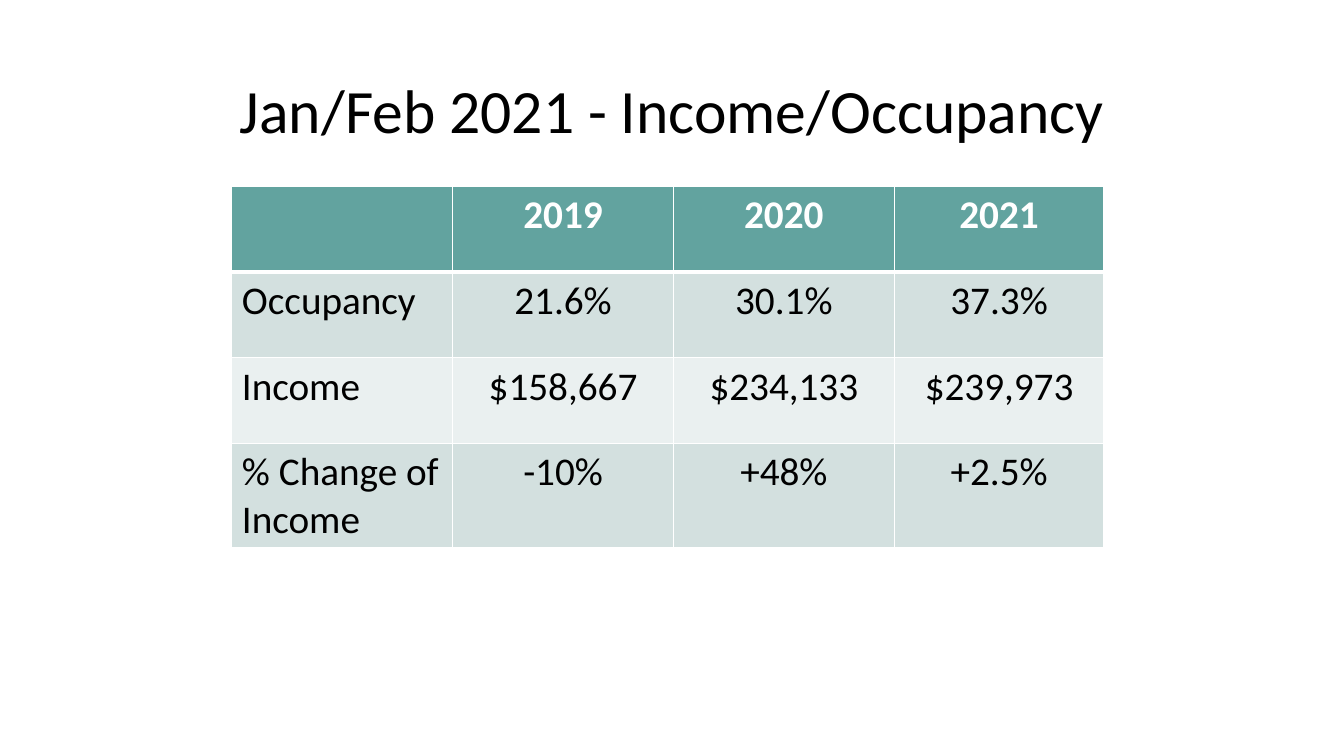
from dataclasses import dataclass

from lxml import etree
from pptx import Presentation
from pptx.dml.color import RGBColor
from pptx.enum import text as t
from pptx.oxml import ns
from pptx.util import Inches, Pt

WHITE = RGBColor(0xFF, 0xFF, 0xFF)
BLACK = RGBColor(0x00, 0x00, 0x00)
TEAL = RGBColor(0x62, 0xA3, 0x9F)
MIST = RGBColor(0xD3, 0xE0, 0xDF)
PALE = RGBColor(0xEA, 0xF0, 0xF0)

TITLE = "Jan/Feb 2021 - Income/Occupancy"
WIDTHS = (2.19, 2.19, 2.19, 2.08)
HEIGHT = 0.85


@dataclass
class Row:
    cells: tuple[str, ...]
    fill: RGBColor
    head: bool = False


ROWS = (
    Row(("", "2019", "2020", "2021"), TEAL, True),
    Row(("Occupancy", "21.6%", "30.1%", "37.3%"), MIST),
    Row(("Income", "$158,667", "$234,133", "$239,973"), PALE),
    Row(("% Change of Income", "-10%", "+48%", "+2.5%"), MIST),
)


def style(para, size: float, color: RGBColor, bold: bool, align) -> None:
    para.alignment = align
    form = {"name": "Calibri", "size": Pt(size), "bold": bold}
    for key, value in form.items():
        setattr(para.font, key, value)
    para.font.color.rgb = color


def edge(cell, sides: dict[str, float]) -> None:
    props = cell._tc.get_or_add_tcPr()
    for spot, (side, width) in enumerate(sides.items()):
        line = etree.Element(ns.qn(f"a:{side}"), w=str(Pt(width)))
        fill = etree.SubElement(line, ns.qn("a:solidFill"))
        etree.SubElement(fill, ns.qn("a:srgbClr"), val=str(WHITE))
        props.insert(spot, line)


def add_title(slide) -> None:
    box = slide.shapes.add_textbox(Inches(0.92), Inches(0.4), Inches(11.5), Inches(1.45))
    frame = box.text_frame
    form = {"word_wrap": True, "vertical_anchor": t.MSO_ANCHOR.MIDDLE, "text": TITLE}
    for key, value in form.items():
        setattr(frame, key, value)
    para = frame.paragraphs[0]
    para.line_spacing = 0.9
    style(para, 44, BLACK, False, t.PP_ALIGN.CENTER)


def add_grid(slide) -> None:
    frame = slide.shapes.add_table(
        len(ROWS), len(WIDTHS), Inches(2.3), Inches(1.85),
        Inches(sum(WIDTHS)), Inches(HEIGHT * len(ROWS)),
    )
    table = frame.table
    for col, width in zip(table.columns, WIDTHS):
        col.width = Inches(width)
    for r, row in enumerate(ROWS):
        table.rows[r].height = Inches(HEIGHT)
        top = 3 if r and ROWS[r - 1].head else 1
        sides = {"lnL": 1, "lnR": 1, "lnT": top, "lnB": 3 if row.head else 1}
        for c, label in enumerate(row.cells):
            cell = table.cell(r, c)
            cell.text = label
            cell.fill.solid()
            cell.fill.fore_color.rgb = row.fill
            edge(cell, sides)
            align = t.PP_ALIGN.CENTER if c else t.PP_ALIGN.LEFT
            color = WHITE if row.head else BLACK
            style(cell.text_frame.paragraphs[0], 28, color, row.head, align)


def main() -> None:
    deck = Presentation()
    deck.slide_width = Inches(13.33)
    deck.slide_height = Inches(7.5)
    slide = deck.slides.add_slide(deck.slide_layouts[6])
    add_title(slide)
    add_grid(slide)
    deck.save("out.pptx")


if __name__ == "__main__":
    main()
